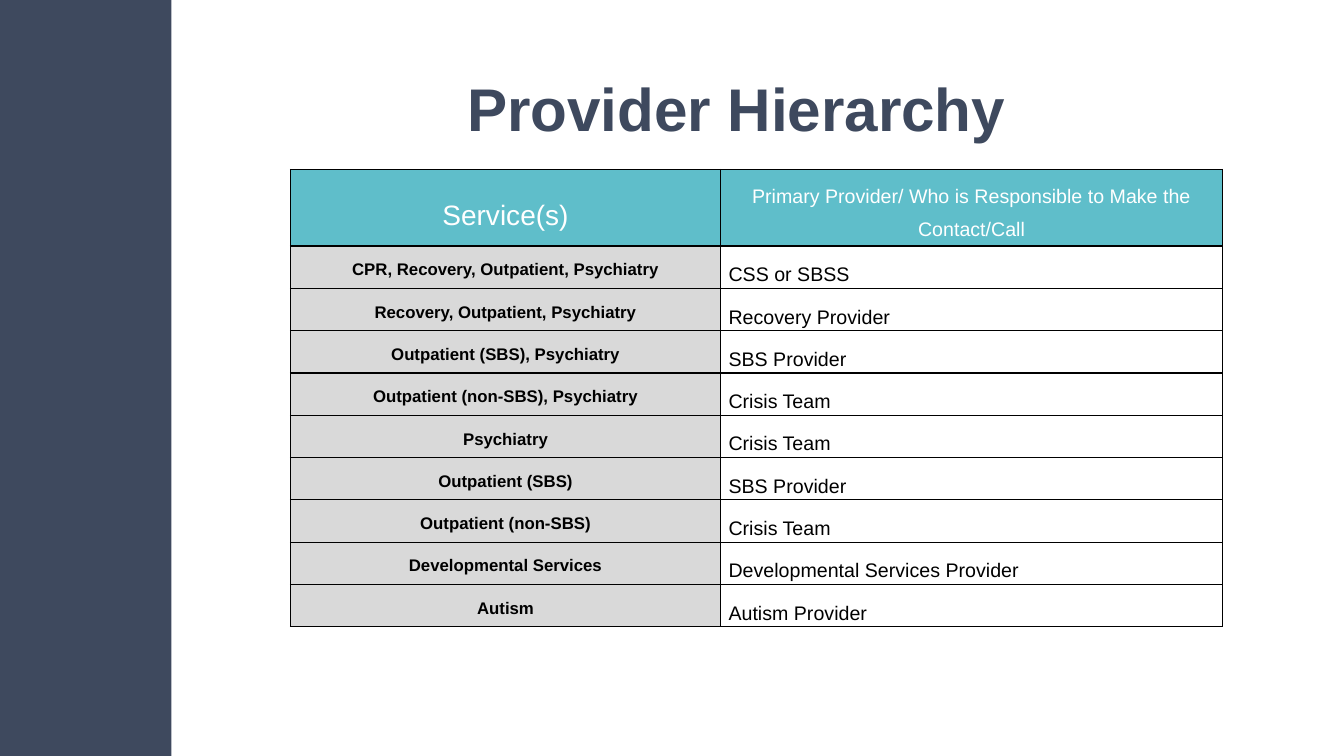
from lxml import etree
from pptx import Presentation
from pptx import util as u
from pptx.dml.color import RGBColor
from pptx.enum import shapes, text
from pptx.oxml.ns import qn

NAVY = RGBColor(0x3E, 0x49, 0x5E)
TEAL = RGBColor(0x5F, 0xBE, 0xCA)
GREY = RGBColor(0xD9, 0xD9, 0xD9)
WHITE = RGBColor(0xFF, 0xFF, 0xFF)
BLACK = RGBColor(0, 0, 0)
FONT = "Arial"

HEADINGS = ("Service(s)", "Primary Provider/ Who is Responsible to Make the Contact/Call")
PROVIDERS = [
    ("CPR, Recovery, Outpatient, Psychiatry", "CSS or SBSS"),
    ("Recovery, Outpatient, Psychiatry", "Recovery Provider"),
    ("Outpatient (SBS), Psychiatry", "SBS Provider"),
    ("Outpatient (non-SBS), Psychiatry", "Crisis Team"),
    ("Psychiatry", "Crisis Team"),
    ("Outpatient (SBS)", "SBS Provider"),
    ("Outpatient (non-SBS)", "Crisis Team"),
    ("Developmental Services", "Developmental Services Provider"),
    ("Autism", "Autism Provider"),
]


def add_sidebar(page, left, top, width, height):
    """Draw the dark band in the given box."""
    band = page.shapes.add_shape(shapes.MSO_SHAPE.RECTANGLE, left, top, width, height)
    band.shadow.inherit = False
    band.fill.solid()
    band.fill.fore_color.rgb = NAVY
    band.line.fill.background()


def place_title(page, wording, left, top, width, height):
    """Move the title placeholder into the given box and format it."""
    title = page.shapes.title
    title.left, title.top, title.width, title.height = left, top, width, height
    title.text_frame.text = wording
    title.text_frame.word_wrap = True
    title.text_frame.vertical_anchor = text.MSO_ANCHOR.MIDDLE
    para = title.text_frame.paragraphs[0]
    para.alignment = text.PP_ALIGN.CENTER
    para.line_spacing = 0.9
    style_font(para.runs[0].font, 43, NAVY, True)


def style_font(font, size, colour, bold=False):
    """Set the typeface, size, colour and weight of a font."""
    font.name, font.size, font.bold = FONT, u.Pt(size), bold
    font.color.rgb = colour


def add_borders(cell):
    """Put a thin black line on every side of a cell."""
    properties = cell._tc.get_or_add_tcPr()
    for index, side in enumerate(("a:lnL", "a:lnR", "a:lnT", "a:lnB")):
        line = etree.Element(qn(side), w=str(u.Pt(1)))
        fill = etree.SubElement(line, qn("a:solidFill"))
        etree.SubElement(fill, qn("a:srgbClr"), val=str(BLACK))
        properties.insert(index, line)


def fill_cell(cell, wording, fill, size, colour, bold=False, centred=True, bottom=0.0):
    """Write and format one table cell."""
    cell.text_frame.text = wording
    cell.margin_left = cell.margin_right = u.Cm(0.2)
    cell.margin_top, cell.margin_bottom = 0, u.Cm(bottom)
    cell.vertical_anchor = text.MSO_ANCHOR.MIDDLE if centred else text.MSO_ANCHOR.BOTTOM
    para = cell.text_frame.paragraphs[0]
    para.alignment = text.PP_ALIGN.CENTER if centred else text.PP_ALIGN.LEFT
    para.line_spacing = 1.5
    style_font(para.runs[0].font, size, colour, bold)
    cell.fill.solid()
    cell.fill.fore_color.rgb = fill
    add_borders(cell)


def add_provider_table(page, left, top, width, height):
    """Build the table of services and providers in the given box."""
    frame = page.shapes.add_table(len(PROVIDERS) + 1, 2, left, top, width, height)
    table = frame.table
    table.first_row = table.horz_banding = False
    table.columns[0].width = u.Cm(10.84)
    table.columns[1].width = width - u.Cm(10.84)
    header_height = u.Cm(1.93)
    for row in table.rows:
        row.height = (height - header_height) // len(PROVIDERS)
    table.rows[0].height = header_height
    for column, (heading, size) in enumerate(zip(HEADINGS, (20, 14))):
        fill_cell(table.cell(0, column), heading, TEAL, size, WHITE)
    for row, (service, provider) in enumerate(PROVIDERS, 1):
        fill_cell(table.cell(row, 0), service, GREY, 12, BLACK, bold=True, bottom=0.1)
        fill_cell(table.cell(row, 1), provider, WHITE, 14, BLACK, centred=False, bottom=0.06)


def main():
    """Build the deck and save it."""
    deck = Presentation()
    deck.slide_width, deck.slide_height = u.Cm(33.87), u.Cm(19.05)
    page = deck.slides.add_slide(deck.slide_layouts[5])
    add_sidebar(page, 0, 0, u.Cm(4.32), deck.slide_height)
    place_title(page, "Provider Hierarchy", u.Cm(4.43), u.Cm(0.99), u.Cm(28.24), u.Cm(3.68))
    add_provider_table(page, u.Cm(7.32), u.Cm(4.27), u.Cm(23.49), u.Cm(11.53))
    deck.save("out.pptx")


if __name__ == "__main__":
    main()
